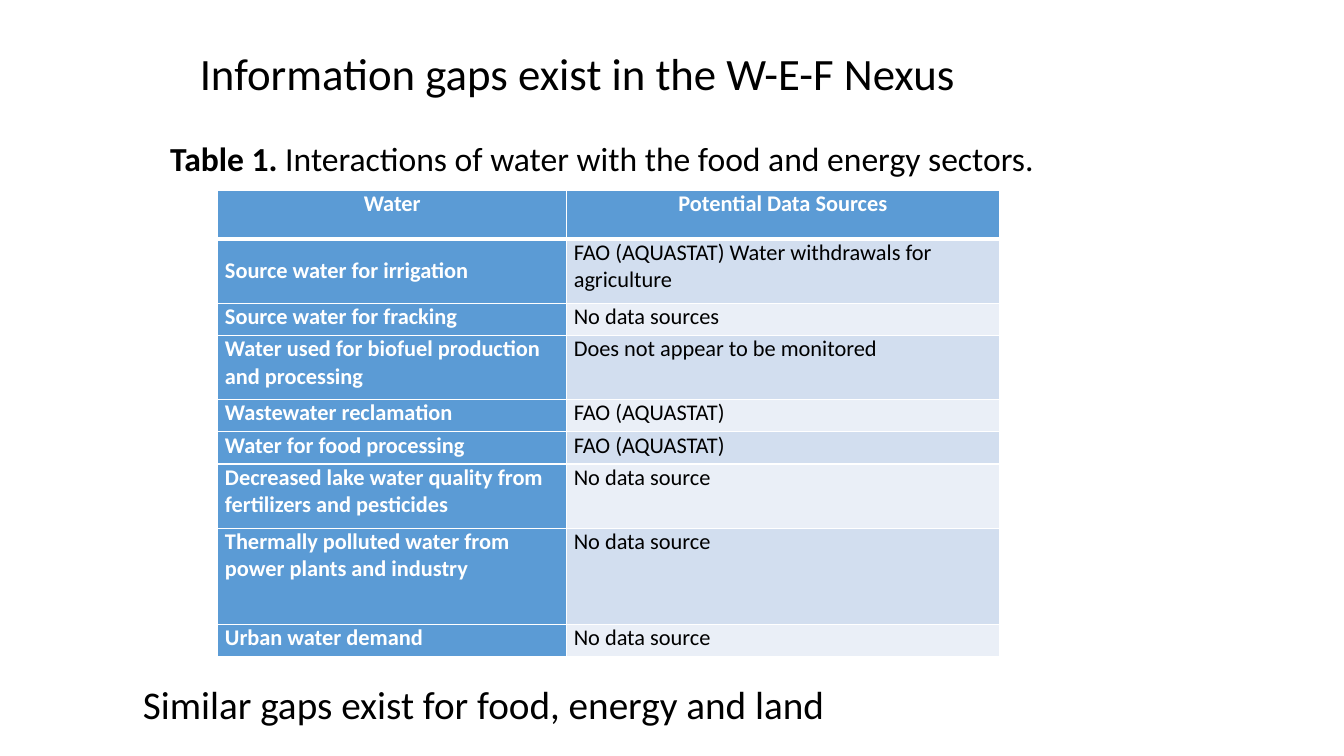
from lxml import etree
from pptx import Presentation
from pptx import util as u
from pptx.dml import color
from pptx.enum import text
from pptx.oxml import ns

FONT = "Calibri"
BLACK, WHITE, BLUE = "000000", "FFFFFF", "5B9BD5"
BANDS = ["D2DEEF", "EAEFF7"]
HEADINGS = ("Water", "Potential Data Sources")
INTERACTIONS = [
    ("Source water for irrigation", "FAO (AQUASTAT) Water withdrawals for agriculture"),
    ("Source water for fracking", "No data sources"),
    ("Water used for biofuel production and processing", "Does not appear to be monitored"),
    ("Wastewater reclamation", "FAO (AQUASTAT)"),
    ("Water for food processing", "FAO (AQUASTAT)"),
    ("Decreased lake water quality from fertilizers and pesticides", "No data source"),
    ("Thermally polluted water from power plants and industry", "No data source"),
    ("Urban water demand", "No data source"),
]
HEADING_HEIGHT, LINE_HEIGHT = 1.22, 0.81
LINES = [2, 1, 2, 1, 1, 2, 3, 1]
WATER_SHARE = 0.4465


def rgb(value):
    """Return the colour for a hex string."""
    return color.RGBColor.from_string(value)


def style_run(run, size, bold=False, ink=BLACK):
    """Set the font of a run."""
    run.font.name, run.font.size, run.font.bold = FONT, u.Pt(size), bold
    run.font.color.rgb = rgb(ink)


def add_title(slide, left, top, width, height):
    """Place the slide title in its placeholder."""
    title = slide.shapes.title
    title.left, title.top, title.width, title.height = map(u.Cm, (left, top, width, height))
    frame = title.text_frame
    frame.text = "Information gaps exist in the W-E-F Nexus"
    frame.auto_size = text.MSO_AUTO_SIZE.NONE
    frame.vertical_anchor = text.MSO_ANCHOR.TOP
    frame.paragraphs[0].alignment = text.PP_ALIGN.LEFT
    style_run(frame.paragraphs[0].runs[0], 32)


def add_line(slide, left, top, width, height, size, parts):
    """Place one line of text made of (wording, bold) parts."""
    frame = slide.shapes.add_textbox(*map(u.Cm, (left, top, width, height))).text_frame
    frame.word_wrap = True
    frame.vertical_anchor = text.MSO_ANCHOR.MIDDLE
    for wording, bold in parts:
        run = frame.paragraphs[0].add_run()
        run.text = wording
        style_run(run, size, bold)


def set_borders(cell, bottom):
    """Draw white cell borders, the lower one with the given weight."""
    properties = cell._tc.get_or_add_tcPr()
    for position, side in enumerate("LRTB"):
        weight = bottom if side == "B" else 1
        line = etree.Element(ns.qn(f"a:ln{side}"), w=str(u.Pt(weight)))
        fill = etree.SubElement(line, ns.qn("a:solidFill"))
        etree.SubElement(fill, ns.qn("a:srgbClr"), val=WHITE)
        properties.insert(position, line)


def fill_cell(cell, wording, row, column):
    """Write and format one cell according to its row and column."""
    heading = row == 0
    strong = heading or column == 0
    cell.text = wording
    cell.margin_left = cell.margin_right = u.Cm(0.18)
    cell.margin_top = cell.margin_bottom = u.Cm(0)
    cell.vertical_anchor = text.MSO_ANCHOR.MIDDLE if (row, column) == (1, 0) else text.MSO_ANCHOR.TOP
    cell.fill.solid()
    cell.fill.fore_color.rgb = rgb(BLUE if strong else BANDS[(row - 1) % 2])
    paragraph = cell.text_frame.paragraphs[0]
    paragraph.alignment = text.PP_ALIGN.CENTER if heading else text.PP_ALIGN.LEFT
    style_run(paragraph.runs[0], 16, strong, WHITE if strong else BLACK)
    set_borders(cell, 3 if heading or row == 0 else 1)
    if row == 1:
        cell._tc.tcPr.find(ns.qn("a:lnT")).set("w", str(u.Pt(3)))


def add_interactions(slide, left, top, width):
    """Place the table of water interactions and their data sources."""
    heights = [HEADING_HEIGHT] + [lines * LINE_HEIGHT for lines in LINES]
    entries = [HEADINGS] + INTERACTIONS
    box = map(u.Cm, (left, top, width, sum(heights)))
    table = slide.shapes.add_table(len(entries), 2, *box).table
    for column, share in zip(table.columns, (WATER_SHARE, 1 - WATER_SHARE)):
        column.width = u.Cm(width * share)
    for row, (entry, height) in enumerate(zip(entries, heights)):
        table.rows[row].height = u.Cm(height)
        for column, wording in enumerate(entry):
            fill_cell(table.cell(row, column), wording, row, column)


def main():
    """Build and save the slide."""
    deck = Presentation()
    deck.slide_width, deck.slide_height = u.Cm(33.87), u.Cm(19.05)
    slide = deck.slides.add_slide(deck.slide_layouts[5])
    add_title(slide, 4.78, 1.02, 24.82, 1.63)
    add_line(slide, 4.04, 3.25, 29.8, 1.45, 24,
             [("Table 1.", True), (" Interactions of water with the food and energy sectors.", False)])
    add_interactions(slide, 5.49, 4.8, 19.69)
    add_line(slide, 3.35, 17.02, 25.22, 1.45, 28,
             [("Similar gaps exist for food, energy and land", False)])
    deck.save("out.pptx")


if __name__ == "__main__":
    main()
